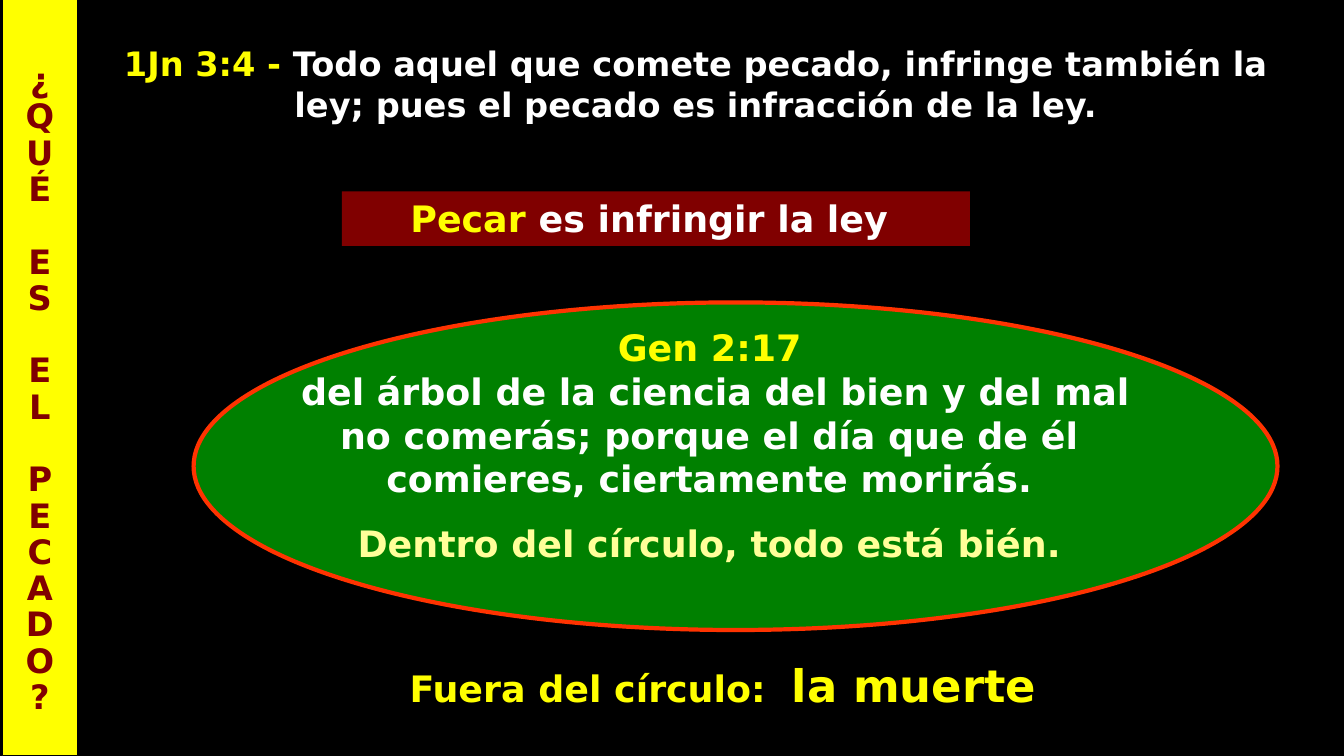
from pptx import Presentation
from pptx import util as u
from pptx.dml.color import RGBColor
from pptx.enum import shapes, text

THEME = {
    "font": "DejaVu Sans",
    "black": "000000", "white": "FFFFFF", "yellow": "FFFF00", "cream": "FFFF99",
    "maroon": "800000", "green": "008000", "red": "FF3300",
    "small": 24, "body": 26, "large": 32,
}


def add_panel(s, kind, box, fill, line=None, width=0):
    sp = s.shapes.add_shape(kind, *[u.Inches(n) for n in box])
    sp.shadow.inherit = False
    sp.fill.solid()
    sp.fill.fore_color.rgb = RGBColor.from_string(THEME[fill])
    if line:
        sp.line.color.rgb = RGBColor.from_string(THEME[line])
        sp.line.width = u.Pt(width)
    else:
        sp.line.fill.background()
    return sp


def write(sp, paragraphs, **spacing):
    tf = sp.text_frame
    frame = {"word_wrap": True, "auto_size": text.MSO_AUTO_SIZE.NONE,
             "vertical_anchor": text.MSO_ANCHOR.TOP,
             "margin_left": u.Inches(0.1), "margin_right": u.Inches(0.1),
             "margin_top": u.Inches(0.05), "margin_bottom": u.Inches(0.05)}
    for name, value in frame.items():
        setattr(tf, name, value)
    for i, runs in enumerate(paragraphs):
        p = tf.add_paragraph() if i else tf.paragraphs[0]
        layout = {"alignment": text.PP_ALIGN.CENTER, "space_before": u.Pt(0), **spacing}
        for name, value in layout.items():
            setattr(p, name, value)
        for words, color, size in runs:
            r = p.add_run()
            r.text = words
            font = {"name": THEME["font"], "size": u.Pt(THEME[size]), "bold": True}
            for name, value in font.items():
                setattr(r.font, name, value)
            r.font.color.rgb = RGBColor.from_string(THEME[color])


prs = Presentation()
prs.slide_width, prs.slide_height = u.Inches(13.33), u.Inches(7.5)
s = prs.slides.add_slide(prs.slide_layouts[5])
s.background.fill.solid()
s.background.fill.fore_color.rgb = RGBColor.from_string(THEME["black"])

add_panel(s, shapes.MSO_SHAPE.OVAL, (1.92, 3, 10.75, 3.25), "green", "red", 3)
add_panel(s, shapes.MSO_SHAPE.RECTANGLE, (0.02, 0, 0.75, 7.5), "yellow", "black", 0.75)
banner = add_panel(s, shapes.MSO_SHAPE.RECTANGLE, (3.39, 1.9, 6.23, 0.54), "maroon")
write(banner, [[("Pecar ", "yellow", "body"), ("es infringir la ley ", "white", "body")]])

texts = [
    ((0.79, 0.38, 12.22, 0.91), 1, [[
        ("1Jn 3:4 - ", "yellow", "small"),
        ("Todo aquel que comete pecado, infringe también la ley; "
         "pues el pecado es infracción de la ley.", "white", "small")]]),
    ((2.54, 3.18, 9, 1.85), 1, [
        [("Gen 2:17", "yellow", "body")],
        [(" del árbol de la ciencia del bien y del mal no comerás; "
          "porque el día que de él comieres, ciertamente morirás.", "white", "body")]]),
    ((3.33, 5.12, 7.42, 0.54), 1, [[
        ("Dentro del círculo, todo está bién.", "cream", "body")]]),
    ((2.67, 6.56, 9, 0.56), 0.85, [[
        ("Fuera del círculo:  ", "yellow", "body"), ("la muerte", "yellow", "large")]]),
]
for box, line_spacing, paragraphs in texts:
    sp = s.shapes.add_textbox(*[u.Inches(n) for n in box])
    write(sp, paragraphs, line_spacing=line_spacing)

title = s.shapes.title
place = {"left": 0.02, "top": 0.58, "width": 0.75, "height": 6.64}
for name, value in place.items():
    setattr(title, name, u.Inches(value))
words = "¿QUÉ ES EL PECADO?".split()
write(title, [[(letter, "maroon", "small")] for word in words for letter in word],
      line_spacing=0.9)
first = 0
for word in words[:-1]:
    first += len(word)
    title.text_frame.paragraphs[first].space_before = u.Pt(26)
s.shapes._spTree.append(title._element)

prs.save("out.pptx")
